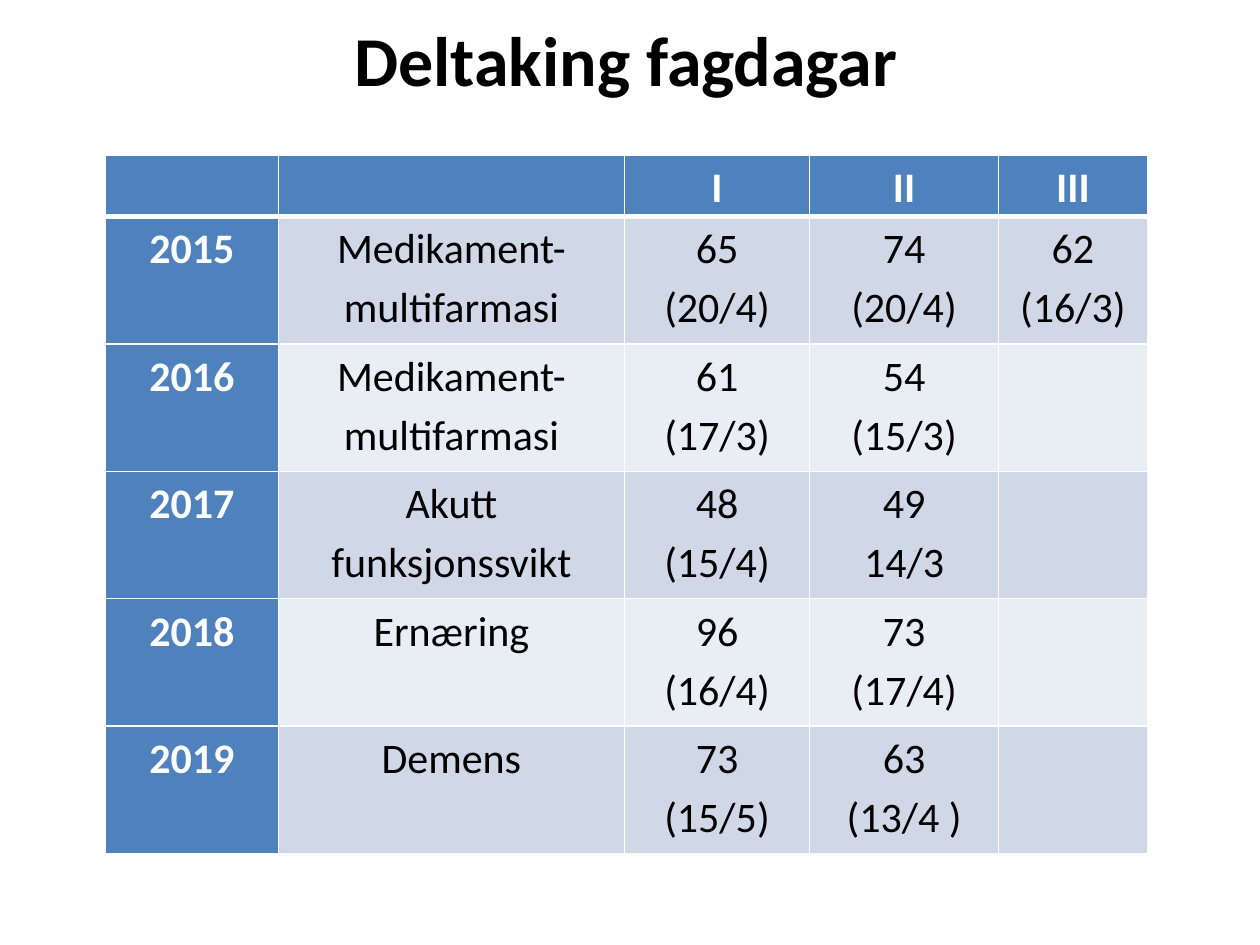
import dataclasses

import lxml.etree
import pptx
import pptx.dml.color
import pptx.enum.text
import pptx.oxml.ns
import pptx.util

Cm = pptx.util.Cm
Pt = pptx.util.Pt


@dataclasses.dataclass(frozen=True)
class Theme:
    font: str = "Calibri"
    title_size: int = 40
    table_size: int = 24
    ink: str = "000000"
    paper: str = "FFFFFF"
    accent: str = "4F81BD"
    bands: tuple = ("D0D8E8", "E9EDF4")
    line: int = 1
    header_line: int = 3


THEME = Theme()
COLUMN_WIDTHS = (3.48, 6.98, 3.73, 3.81, 3)
HEADER_HEIGHT = 1.24
ROW_HEIGHT = 2.57
ROWS = (
    ("", "", "I", "II", "III"),
    ("2015", "Medikament-multifarmasi", "65\n(20/4)", "74\n(20/4)", "62\n(16/3)"),
    ("2016", "Medikament-multifarmasi", "61\n(17/3)", "54\n(15/3)", ""),
    ("2017", "Akutt funksjonssvikt", "48\n(15/4)", "49\n14/3", ""),
    ("2018", "Ernæring", "96\n(16/4)", "73\n(17/4)", ""),
    ("2019", "Demens", "73\n(15/5)", "63\n(13/4 )", ""),
)


def rgb(value):
    return pptx.dml.color.RGBColor.from_string(value)


def style_text(text_frame, size, color, bold):
    for paragraph in text_frame.paragraphs:
        paragraph.alignment = pptx.enum.text.PP_ALIGN.CENTER
        for span in paragraph.runs:
            span.font.name = THEME.font
            span.font.size = Pt(size)
            span.font.bold = bold
            span.font.color.rgb = rgb(color)


def add_title(page, left, top, width, height):
    box = page.shapes.add_textbox(Cm(left), Cm(top), Cm(width), Cm(height))
    box.text_frame.word_wrap = True
    box.text_frame.vertical_anchor = pptx.enum.text.MSO_ANCHOR.MIDDLE
    box.text_frame.text = "Deltaking fagdagar"
    style_text(box.text_frame, THEME.title_size, THEME.ink, True)


def set_borders(cell, top, bottom):
    properties = cell._tc.get_or_add_tcPr()
    widths = {"L": THEME.line, "R": THEME.line, "T": top, "B": bottom}
    for position, (side, width) in enumerate(widths.items()):
        line = lxml.etree.Element(pptx.oxml.ns.qn(f"a:ln{side}"), w=str(Pt(width)))
        fill = lxml.etree.SubElement(line, pptx.oxml.ns.qn("a:solidFill"))
        lxml.etree.SubElement(fill, pptx.oxml.ns.qn("a:srgbClr"), val=THEME.paper)
        properties.insert(position, line)


def fill_cell(cell, text, row, column):
    is_heading = row == 0 or column == 0
    cell.margin_left = cell.margin_right = Cm(0.18)
    cell.margin_top = cell.margin_bottom = 0
    cell.fill.solid()
    cell.fill.fore_color.rgb = rgb(THEME.accent if is_heading else THEME.bands[(row - 1) % 2])
    cell.text_frame.text = text
    style_text(cell.text_frame, THEME.table_size, THEME.paper if is_heading else THEME.ink, is_heading)
    for paragraph in cell.text_frame.paragraphs:
        paragraph.line_spacing = 1.15
    set_borders(
        cell,
        top=THEME.header_line if row == 1 else THEME.line,
        bottom=THEME.header_line if row == 0 else THEME.line,
    )


def add_attendance_table(page, left, top):
    heights = [HEADER_HEIGHT] + [ROW_HEIGHT] * (len(ROWS) - 1)
    frame = page.shapes.add_table(
        len(ROWS), len(COLUMN_WIDTHS), Cm(left), Cm(top), Cm(sum(COLUMN_WIDTHS)), Cm(sum(heights))
    )
    table = frame.table
    for column, width in zip(table.columns, COLUMN_WIDTHS):
        column.width = Cm(width)
    for row, height in zip(table.rows, heights):
        row.height = Cm(height)
    for row, texts in enumerate(ROWS):
        for column, text in enumerate(texts):
            fill_cell(table.cell(row, column), text, row, column)


def main():
    deck = pptx.Presentation()
    deck.slide_width, deck.slide_height = Cm(25.4), Cm(19.05)
    page = deck.slides.add_slide(deck.slide_layouts[6])
    add_title(page, 1.19, 0.03, 22.86, 2.31)
    add_attendance_table(page, 2.13, 3.12)
    deck.save("out.pptx")


if __name__ == "__main__":
    main()
